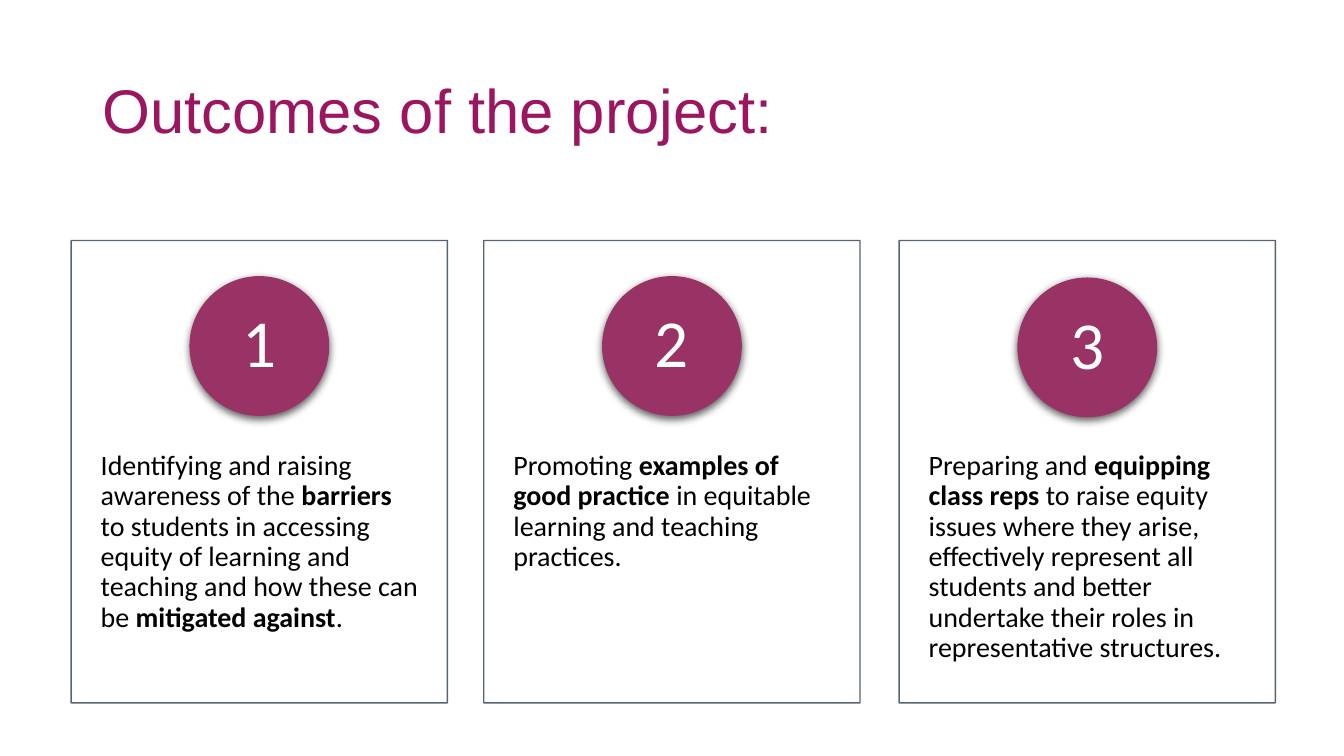
from dataclasses import dataclass

from lxml.etree import SubElement
from pptx import Presentation
from pptx.dml.color import RGBColor
from pptx.enum.shapes import MSO_SHAPE as SHAPE
from pptx.enum.text import MSO_ANCHOR as ANCHOR, PP_ALIGN as ALIGN
from pptx.oxml.ns import qn
from pptx.util import Inches, Pt


@dataclass(frozen=True)
class Theme:
    title: str = "9C1560"
    badge: str = "993366"
    border: str = "44546A"
    text: str = "000000"
    white: str = "FFFFFF"
    title_font: str = "Arial"
    body_font: str = "Calibri"
    title_size: float = 33
    number_size: float = 36
    body_size: float = 15
    line_width: float = 0.75


THEME = Theme()

SLIDE_W = Inches(10)
SLIDE_H = SLIDE_W * 9 // 16
CARD_TOP, CARD_W, CARD_H = 1.79, 2.8, 3.44
TEXT_TOP, TEXT_H = 3.09, 2.06
CIRCLE_SIZE, NUMBER_SIZE = 1.03, 0.73

# Each outcome: card left, badge top, (text, bold) runs
OUTCOMES = [
    (0.53, 2.06, [
        ("Identifying and raising awareness of the ", False),
        ("barriers ", True),
        ("to students in accessing equity of learning and teaching "
         "and how these can be ", False),
        ("mitigated against", True),
        (".", False)]),
    (3.6, 2.06, [
        ("Promoting ", False),
        ("examples of good practice ", True),
        ("in equitable learning and teaching practices.", False)]),
    (6.69, 2.07, [
        ("Preparing and ", False),
        ("equipping class reps ", True),
        ("to raise equity issues where they arise, effectively represent all "
         "students and better undertake their roles in representative "
         "structures.", False)]),
]


def set_attrs(obj, values):
    for name, value in values.items():
        setattr(obj, name, value)


def write_text(sp, runs, font, size, color, inset,
               anchor=ANCHOR.TOP, align=ALIGN.LEFT):
    tf = sp.text_frame
    left, right, y = map(Inches, inset)
    set_attrs(tf, {"word_wrap": True, "vertical_anchor": anchor,
                   "margin_left": left, "margin_right": right,
                   "margin_top": y, "margin_bottom": y})
    p = tf.paragraphs[0]
    set_attrs(p, {"alignment": align, "line_spacing": 0.9})
    for text, bold in runs:
        r = p.add_run()
        r.text = text
        set_attrs(r.font, {"name": font, "size": Pt(size), "bold": bold})
        r.font.color.rgb = RGBColor.from_string(color)


def add_text(shapes, box, *args, **kwargs):
    sp = shapes.add_textbox(*map(Inches, box))
    write_text(sp, *args, **kwargs)


def add_panel(shapes, kind, box, fill, line, opacity=100):
    sp = shapes.add_shape(kind, *map(Inches, box))
    sp.shadow.inherit = False
    sp.fill.solid()
    sp.fill.fore_color.rgb = RGBColor.from_string(fill)
    sp.line.color.rgb = RGBColor.from_string(line)
    sp.line.width = Pt(THEME.line_width)
    if opacity < 100:
        for color in sp._element.spPr.iter(qn("a:srgbClr")):
            SubElement(color, qn("a:alpha"), val=str(opacity * 1000))
    return sp


def add_shadow(sp):
    effects = sp._element.spPr.find(qn("a:effectLst"))
    shadow = SubElement(effects, qn("a:outerShdw"), blurRad=str(Pt(4.5)),
                        dist=str(Pt(1.5)), dir="5400000", algn="ctr",
                        rotWithShape="0")
    color = SubElement(shadow, qn("a:srgbClr"), val=THEME.text)
    SubElement(color, qn("a:alpha"), val="63000")


def add_card(slide, left, runs):
    shapes = slide.shapes.add_group_shape().shapes
    add_panel(shapes, SHAPE.RECTANGLE, (left, CARD_TOP, CARD_W, CARD_H),
              THEME.white, THEME.border, opacity=90)
    add_text(shapes, (left, TEXT_TOP, CARD_W, TEXT_H), runs,
             THEME.body_font, THEME.body_size, THEME.text, (0.22, 0.2, 0.27))


def add_badge(slide, card_left, top, number):
    shapes = slide.shapes.add_group_shape().shapes
    left = card_left + (CARD_W - CIRCLE_SIZE) / 2
    circle = add_panel(shapes, SHAPE.OVAL,
                       (left, top, CIRCLE_SIZE, CIRCLE_SIZE),
                       THEME.badge, THEME.badge)
    add_shadow(circle)
    pad = (CIRCLE_SIZE - NUMBER_SIZE) / 2
    label = add_panel(shapes, SHAPE.RECTANGLE,
                      (left + pad, top + pad, NUMBER_SIZE, NUMBER_SIZE),
                      THEME.badge, THEME.badge)
    write_text(label, [(str(number), False)], THEME.body_font,
               THEME.number_size, THEME.white, (0.08, 0.08, 0.01),
               ANCHOR.MIDDLE, ALIGN.CENTER)


def main():
    prs = Presentation()
    set_attrs(prs, {"slide_width": SLIDE_W, "slide_height": SLIDE_H})
    s = prs.slides.add_slide(prs.slide_layouts[6])

    # Title
    add_text(s.shapes, (0.69, 0.3, 8.62, 1.09),
             [("Outcomes of the project:", False)], THEME.title_font,
             THEME.title_size, THEME.title, (0.07, 0.07, 0.04), ANCHOR.MIDDLE)

    # Outcome cards
    for left, _, runs in OUTCOMES:
        add_card(s, left, runs)

    # Numbered badges
    for number, (left, top, _) in enumerate(OUTCOMES, 1):
        add_badge(s, left, top, number)

    prs.save("out.pptx")


if __name__ == "__main__":
    main()
